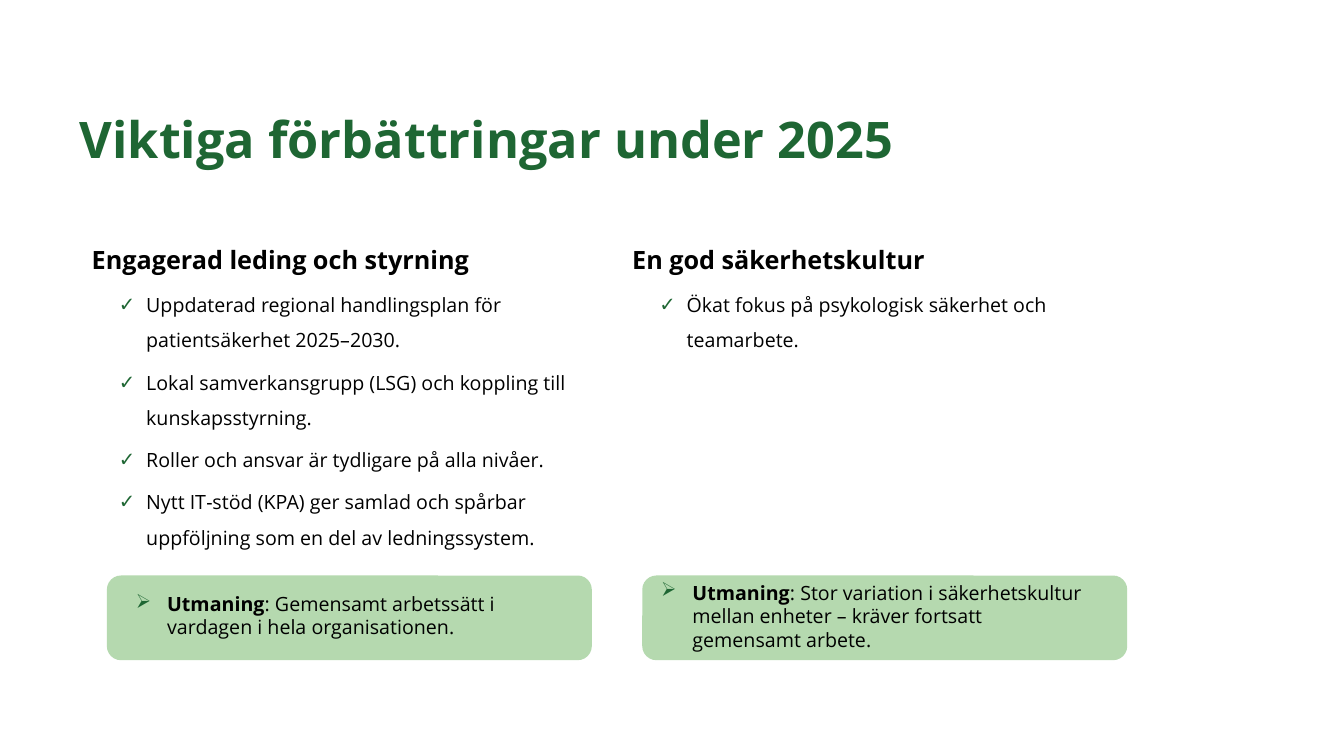
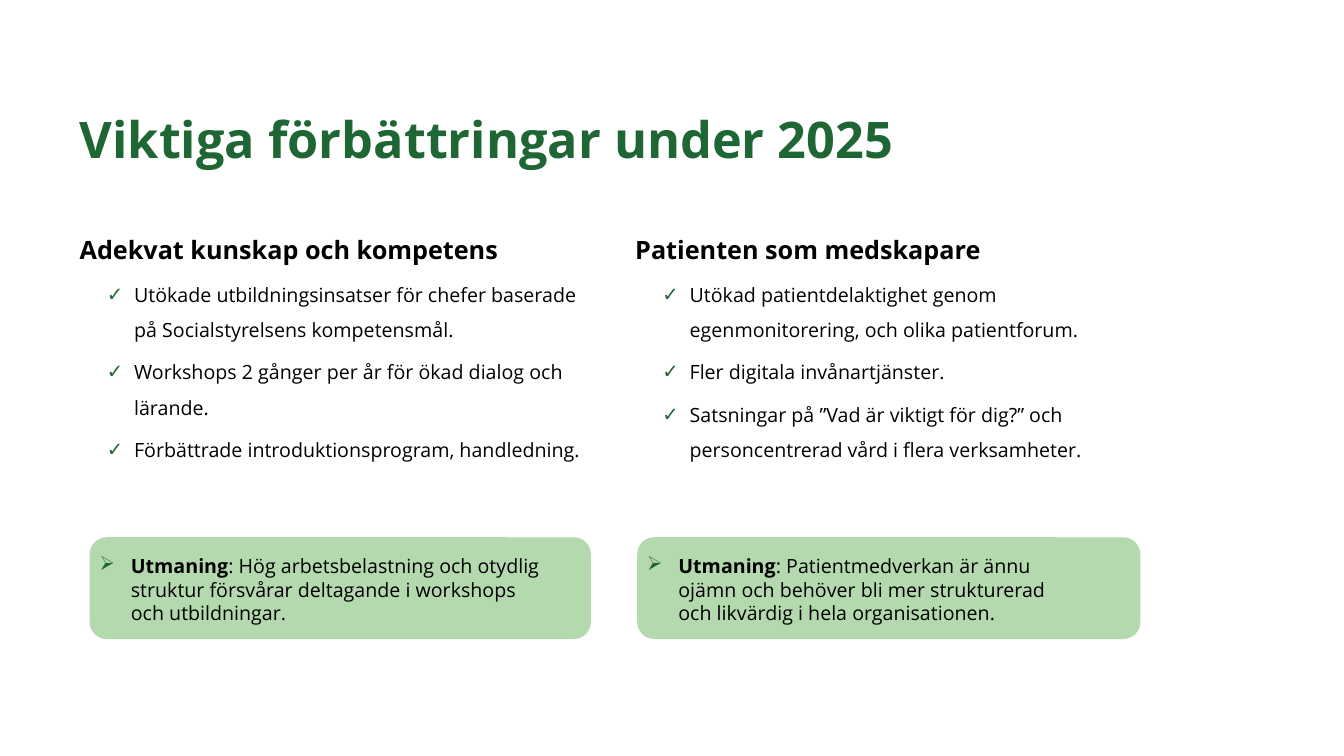
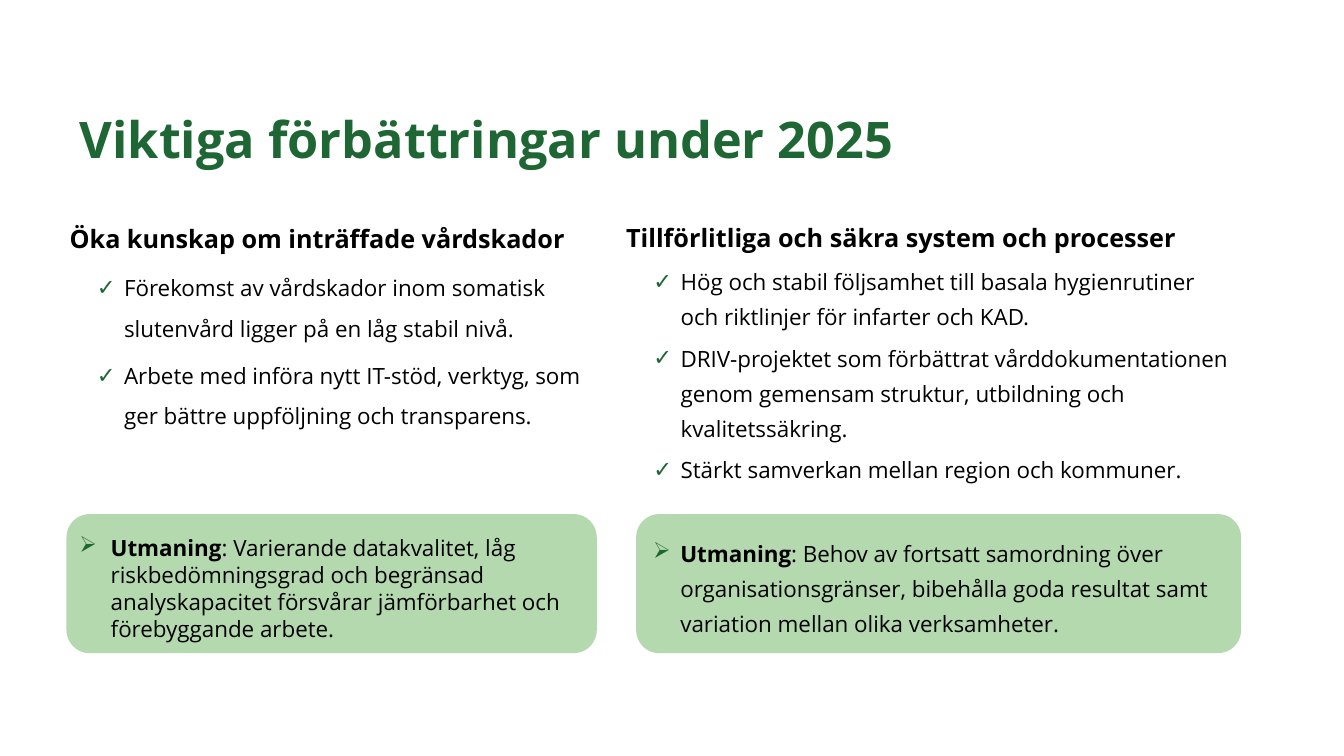
from dataclasses import dataclass, field

from lxml.etree import SubElement
from pptx import Presentation
from pptx.dml.color import RGBColor
from pptx.enum.shapes import MSO_SHAPE
from pptx.enum.text import MSO_ANCHOR, MSO_AUTO_SIZE, PP_ALIGN
from pptx.oxml.ns import qn
from pptx.util import Inches, Pt

GREEN = RGBColor(0x1E, 0x66, 0x33)
PALE_GREEN = RGBColor(0xB5, 0xD9, 0xAF)
BLACK = RGBColor(0, 0, 0)
FONT = "Open Sans"
TITLE = "Viktiga förbättringar under 2025"
UNIT = Inches(0.1)  # side of one grid square; the slide is 75 rows high


@dataclass
class Column:
    """Boxes are (left, top, width, height) in grid units; note is relative to card."""
    heading: str
    items: list
    challenge: list  # one entry per forced line
    body: tuple
    card: tuple
    note: tuple
    size: int = 14
    spacing: float = 1.5
    note_format: dict = field(default_factory=dict)


SLIDES = [
    (113.3, [
        Column("Engagerad leding och styrning",
               ["Uppdaterad regional handlingsplan för patientsäkerhet 2025–2030.",
                "Lokal samverkansgrupp (LSG) och koppling till kunskapsstyrning.",
                "Roller och ansvar är tydligare på alla nivåer.",
                "Nytt IT‑stöd (KPA) ger samlad och spårbar uppföljning som en del av "
                "ledningssystem."],
               ["Gemensamt arbetssätt i vardagen i hela organisationen."],
               (8.1, 22.2, 53.6, 43.9), (10.6, 57.1, 48.1, 8.4), (1.9, 1.1, 44.3, 8.8)),
        Column("En god säkerhetskultur",
               ["Ökat fokus på psykologisk säkerhet och teamarbete."],
               ["Stor variation i säkerhetskultur mellan enheter – kräver fortsatt",
                "gemensamt arbete."],
               (61.7, 22.2, 53.6, 43.9), (63.7, 57.1, 48.1, 8.4), (0.9, 0, 44.3, 11.1)),
    ]),
    (91.2, [
        Column("Adekvat kunskap och kompetens",
               ["Utökade utbildningsinsatser för chefer baserade på Socialstyrelsens "
                "kompetensmål.",
                "Workshops 2 gånger per år för ökad dialog och lärande.",
                "Förbättrade introduktionsprogram, handledning."],
               ["Hög arbetsbelastning och otydlig struktur försvårar deltagande i workshops",
                "och utbildningar."],
               (6.9, 21.2, 53.6, 39.3), (8.9, 53.3, 49.7, 10.1), (0, 1.2, 48.7, 11.1)),
        Column("Patienten som medskapare",
               ["Utökad patientdelaktighet genom egenmonitorering, och olika patientforum.",
                "Fler digitala invånartjänster.",
                "Satsningar på ”Vad är viktigt för dig?” och personcentrerad vård i flera "
                "verksamheter."],
               ["Patientmedverkan är ännu ojämn och behöver bli mer strukturerad och "
                "likvärdig i hela organisationen."],
               (62, 21.2, 53.6, 43.9), (63.2, 53.3, 49.9, 10.1), (0, 1.2, 44.2, 11.1)),
    ]),
    (91.2, [
        Column("Öka kunskap om inträffade vårdskador",
               ["Förekomst av vårdskador inom somatisk slutenvård ligger på en låg stabil nivå.",
                "Arbete med införa nytt IT-stöd, verktyg, som ger bättre uppföljning och "
                "transparens."],
               ["Varierande datakvalitet, låg riskbedömningsgrad och begränsad "
                "analyskapacitet försvårar jämförbarhet och förebyggande arbete."],
               (5.9, 20.2, 53.6, 43.9), (6.6, 51, 52.6, 13.8), (0.3, 1.5, 52.6, 14.8),
               size=16),
        Column("Tillförlitliga och säkra system och processer",
               ["Hög och stabil följsamhet till basala hygienrutiner och riktlinjer för "
                "infarter och KAD.",
                "DRIV‑projektet som förbättrat vårddokumentationen genom gemensam struktur, "
                "utbildning och kvalitetssäkring.",
                "Stärkt samverkan mellan region och kommuner."],
               ["Behov av fortsatt samordning över organisationsgränser, bibehålla goda "
                "resultat samt variation mellan olika verksamheter."],
               (61.1, 20.7, 62.7, 51.8), (63.1, 51, 60, 13.8), (0.7, 1.3, 59.3, 12.5),
               size=16, spacing=1.3, note_format={"spacing": 1.3, "indent": 0.27}),
    ]),
]


def put(obj, **values):
    for name, value in values.items():
        setattr(obj, name, value)


def grid(box):
    return [round(v * UNIT) for v in box]


def place(sp, box):
    put(sp, **dict(zip(("left", "top", "width", "height"), grid(box))))


def add_run(p, text, size, bold=False, color=BLACK):
    r = p.add_run()
    r.text = text
    put(r.font, name=FONT, size=Pt(size), bold=bold)
    r.font.color.rgb = color


def set_bullet(p, char=None, left=0, hang=0):
    pPr = p._p.get_or_add_pPr()
    pPr.set("marL", str(Inches(left)))
    pPr.set("indent", str(-Inches(hang)))
    if char:
        clr = SubElement(pPr, qn("a:buClr"))
        SubElement(clr, qn("a:srgbClr")).set("val", str(GREEN))
        SubElement(pPr, qn("a:buChar")).set("char", char)
    else:
        SubElement(pPr, qn("a:buNone"))


def add_title(s, width):
    sp = s.shapes.title
    place(sp, (6.9, 5.7, width, 14.5))
    put(sp.text_frame, vertical_anchor=MSO_ANCHOR.MIDDLE, word_wrap=True,
        auto_size=MSO_AUTO_SIZE.NONE)
    p = sp.text_frame.paragraphs[0]
    put(p, alignment=PP_ALIGN.LEFT, line_spacing=1.25)
    add_run(p, TITLE, 36, True, GREEN)


def add_body(sp, col):
    place(sp, col.body)
    tf = sp.text_frame
    put(tf, auto_size=MSO_AUTO_SIZE.NONE, word_wrap=True)
    # Heading
    p = tf.paragraphs[0]
    set_bullet(p)
    put(p, line_spacing=col.spacing, space_before=Pt(0))
    add_run(p, col.heading, 18, True)
    # Ticked list
    for item in col.items:
        p = tf.add_paragraph()
        set_bullet(p, "✓", 0.54, 0.27)
        put(p, level=1, line_spacing=col.spacing, space_before=Pt(5))
        add_run(p, item, col.size)


def add_challenge(s, col, spacing=1.0, indent=0.31):
    # Card, behind all text
    card = s.shapes.add_shape(MSO_SHAPE.ROUNDED_RECTANGLE, *grid(col.card))
    card.shadow.inherit = False
    card.fill.solid()
    card.fill.fore_color.rgb = PALE_GREEN
    card.line.fill.background()
    s.shapes.element.insert(2, card.element)
    # Text on the card
    dx, dy, w, h = col.note
    x, y = col.card[:2]
    tf = s.shapes.add_textbox(*grid((x + dx, y + dy, w, h))).text_frame
    put(tf, word_wrap=True, auto_size=MSO_AUTO_SIZE.SHAPE_TO_FIT_TEXT)
    p = tf.paragraphs[0]
    set_bullet(p, "➢", indent, indent)
    p.line_spacing = spacing
    add_run(p, "Utmaning", col.size, True)
    first, *rest = col.challenge
    add_run(p, ": " + first, col.size)
    for line in rest:
        p.add_line_break()
        add_run(p, line, col.size)


def add_slide(prs, title_width, columns):
    s = prs.slides.add_slide(prs.slide_layouts[3])
    add_title(s, title_width)
    for idx, col in enumerate(columns, 1):
        add_body(s.placeholders[idx], col)
        add_challenge(s, col, **col.note_format)


def main():
    prs = Presentation()
    put(prs, slide_width=Inches(13.33), slide_height=Inches(7.5))
    for title_width, columns in SLIDES:
        add_slide(prs, title_width, columns)
    prs.save("out.pptx")


if __name__ == "__main__":
    main()
